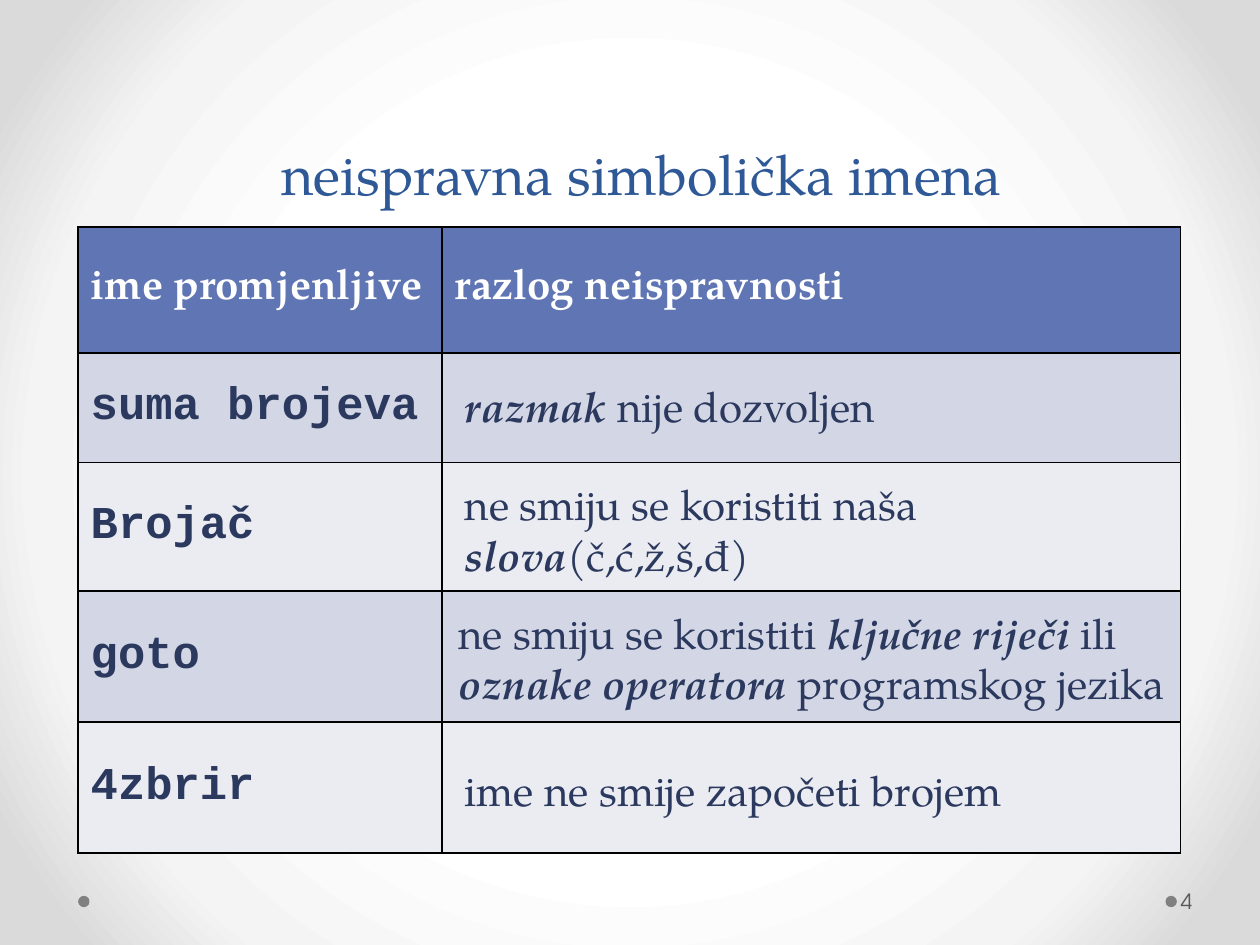
import pptx
import pptx.dml.color
import pptx.enum.shapes
import pptx.enum.text
import pptx.oxml
import pptx.oxml.ns
import pptx.util
from dataclasses import dataclass

Inches = pptx.util.Inches
Pt = pptx.util.Pt
ANCHOR = pptx.enum.text.MSO_ANCHOR
NS = pptx.oxml.ns.nsdecls("a")


@dataclass(frozen=True)
class Theme:
    serif: str = "TeX Gyre Pagella"
    sans: str = "TeX Gyre Adventor"
    mono: str = "Courier New"
    title: str = "2F5897"
    ink: str = "2C395E"
    white: str = "FFFFFF"
    head: str = "6076B4"
    bands: tuple = ("D2D6E5", "EAECF2")
    line: str = "000000"
    dot: str = "808080"
    page: str = "595959"
    glow: tuple = ((50, "FFFFFF"), (76, "F4F4F4"), (92, "DADADA"))
    strut: int = 54
    big: int = 32
    code: int = 26
    body: int = 24
    small: int = 12


THEME = Theme()
NAMES = ["suma brojeva", "Brojač", "goto", "4zbrir"]
# Each reason: left, top, width, height, extra indent, (text, stressed) runs
REASONS = [
    (3.59, 2.97, 5.7, 0.5, 0, [("razmak", True), (" nije dozvoljen", False)]),
    (3.59, 3.75, 5.7, 0.91, 0, [
        ("ne smiju se koristiti naša ", False), ("slova", True),
        ("(č,ć,ž,š,đ)", False)]),
    (3.44, 4.77, 6.17, 0.91, 0.1, [
        ("ne smiju se koristiti ", False), ("ključne riječi ", True),
        ("ili ", False), ("oznake operatora ", True),
        ("programskog jezika", False)]),
    (3.59, 6.02, 5.7, 0.5, 0, [("ime ne smije započeti brojem", False)]),
]


def rgb(code):
    return pptx.dml.color.RGBColor.from_string(code)


def add_run(para, text, face, size, color, bold=False, slant=False):
    run = para.add_run()
    run.text = text
    font = run.font
    font.name, font.size = face, Pt(size)
    font.bold, font.italic = bold, slant
    font.color.rgb = rgb(color)


def add_box(slide, left, top, width, height, anchor=ANCHOR.TOP):
    box = slide.shapes.add_textbox(
        Inches(left), Inches(top), Inches(width), Inches(height))
    frame = box.text_frame
    frame.word_wrap = True
    frame.vertical_anchor = anchor
    return frame


def indent(para, left, first=0):
    props = para._p.get_or_add_pPr()
    props.set("marL", str(Inches(left)))
    props.set("indent", str(Inches(first)))


def set_back(slide):
    """Fill the background with a round glow from the centre."""
    slide.background.fill.gradient()
    grad = next(slide.element.iter(pptx.oxml.ns.qn("a:gradFill")))
    for child in list(grad):
        grad.remove(child)
    stops = "".join(
        f'<a:gs pos="{pos * 1000}"><a:srgbClr val="{color}"/></a:gs>'
        for pos, color in THEME.glow)
    grad.append(pptx.oxml.parse_xml(f"<a:gsLst {NS}>{stops}</a:gsLst>"))
    grad.append(pptx.oxml.parse_xml(
        f'<a:path {NS} path="circle"><a:fillToRect l="50000" t="50000" '
        'r="50000" b="50000"/></a:path>'))


def add_dot(slide, left):
    dot = slide.shapes.add_shape(
        pptx.enum.shapes.MSO_SHAPE.OVAL,
        Inches(left), Inches(7.11), Inches(0.09), Inches(0.09))
    dot.shadow.inherit = False
    dot.fill.solid()
    dot.fill.fore_color.rgb = rgb(THEME.dot)
    dot.line.fill.background()


def add_title(slide):
    frame = add_box(slide, 0.5, 0, 9, 1.75, ANCHOR.BOTTOM)
    para = frame.paragraphs[0]
    para.alignment = pptx.enum.text.PP_ALIGN.CENTER
    para.line_spacing = 1.3
    indent(para, 0.38, -0.38)
    add_run(para, " ", THEME.serif, THEME.strut, THEME.title)
    add_run(para, "neispravna simbolička imena", THEME.serif, THEME.big,
            THEME.title)


def style_cell(cell, color):
    """Give the cell thin borders and a plain fill."""
    props = cell._tc.get_or_add_tcPr()
    for side in "LRTB":
        props.append(pptx.oxml.parse_xml(
            f'<a:ln{side} {NS} w="{Pt(1)}"><a:solidFill>'
            f'<a:srgbClr val="{THEME.line}"/></a:solidFill></a:ln{side}>'))
    cell.fill.solid()
    cell.fill.fore_color.rgb = rgb(color)
    cell.vertical_anchor = ANCHOR.MIDDLE


def add_grid(slide):
    cols, rows = [2.89, 5.86], [1, 0.87, 1.02, 1.04, 1.04]
    table = slide.shapes.add_table(
        len(rows), len(cols), Inches(0.62), Inches(1.8),
        Inches(sum(cols)), Inches(sum(rows))).table
    for col, width in zip(table.columns, cols):
        col.width = Inches(width)
    for num, (row, height) in enumerate(zip(table.rows, rows)):
        row.height = Inches(height)
        color = THEME.bands[(num - 1) % 2] if num else THEME.head
        for cell in row.cells:
            style_cell(cell, color)
    for col, text in enumerate(["ime promjenljive", "razlog neispravnosti"]):
        add_run(table.cell(0, col).text_frame.paragraphs[0], text,
                THEME.serif, THEME.body, THEME.white, bold=True)
    for num, name in enumerate(NAMES, 1):
        add_run(table.cell(num, 0).text_frame.paragraphs[0], name,
                THEME.mono, THEME.code, THEME.ink, bold=True)


def add_reason(slide, left, top, width, height, inset, runs):
    frame = add_box(slide, left, top, width, height)
    frame.auto_size = pptx.enum.text.MSO_AUTO_SIZE.SHAPE_TO_FIT_TEXT
    para = frame.paragraphs[0]
    para.level = 1
    indent(para, inset)
    for text, stress in runs:
        add_run(para, text, THEME.serif, THEME.body, THEME.ink, stress, stress)


def add_page(slide):
    frame = add_box(slide, 9.34, 6.95, 0.61, 0.4, ANCHOR.MIDDLE)
    frame.margin_left = Inches(0.03)
    frame.margin_right = Inches(0.05)
    add_run(frame.paragraphs[0], "4", THEME.sans, THEME.small, THEME.page)


def main():
    deck = pptx.Presentation()
    deck.slide_width, deck.slide_height = Inches(10), Inches(7.5)
    slide = deck.slides.add_slide(deck.slide_layouts[6])
    set_back(slide)
    for left in (9.25, 0.62):
        add_dot(slide, left)
    add_title(slide)
    add_grid(slide)
    add_page(slide)
    for reason in REASONS:
        add_reason(slide, *reason)
    deck.save("out.pptx")


if __name__ == "__main__":
    main()
